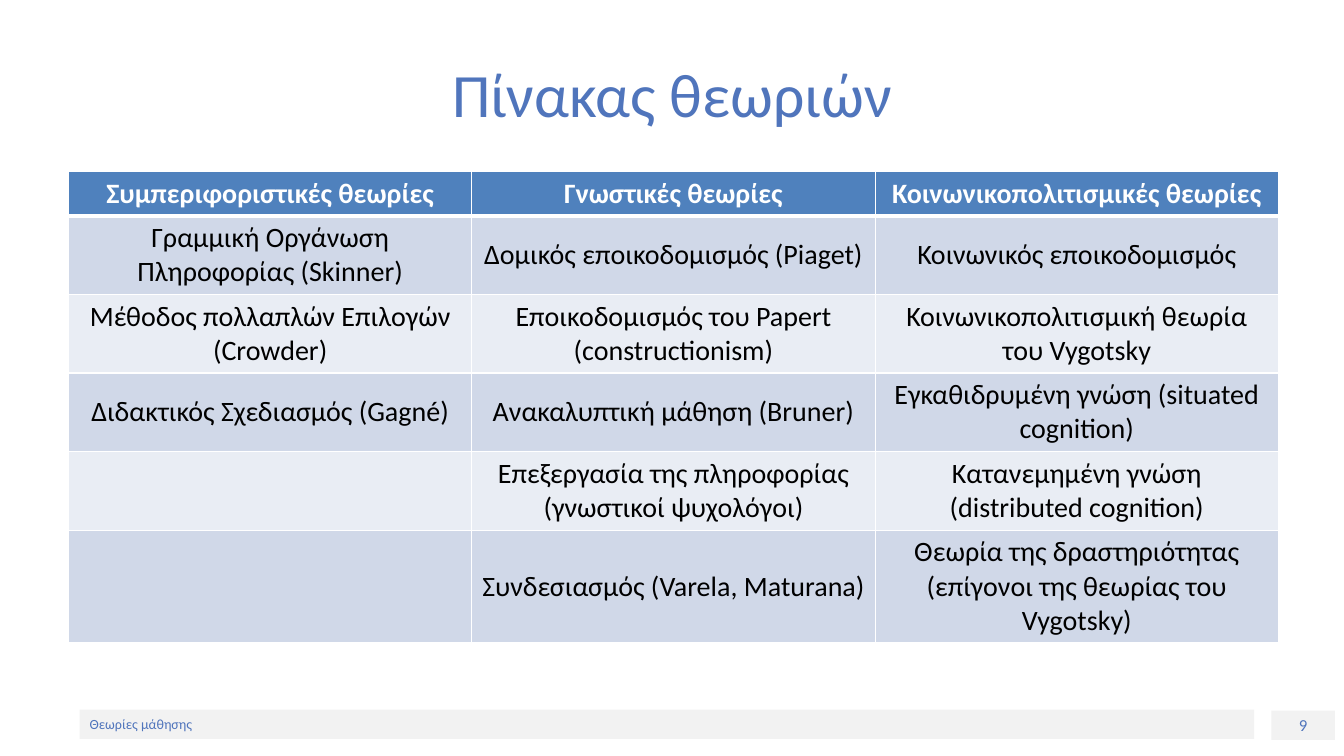
"""Build a slide with a table of learning theories in three families."""
from pptx import Presentation
from pptx import util as u
from pptx.dml.color import RGBColor
from pptx.enum import shapes, text
from pptx.oxml import parse_xml
from pptx.oxml.ns import nsdecls

TITLE = "Πίνακας θεωριών"
FOOTER = "Θεωρίες μάθησης"
PAGE_NUMBER = "9"
THEORIES = [
    ("Συμπεριφοριστικές θεωρίες", "Γνωστικές θεωρίες", "Κοινωνικοπολιτισμικές θεωρίες"),
    ("Γραμμική Οργάνωση Πληροφορίας (Skinner)", "Δομικός εποικοδομισμός (Piaget)",
     "Κοινωνικός εποικοδομισμός"),
    ("Μέθοδος πολλαπλών Επιλογών (Crowder)", "Εποικοδομισμός του Papert (constructionism)",
     "Κοινωνικοπολιτισμική θεωρία του Vygotsky"),
    ("Διδακτικός Σχεδιασμός (Gagné)", "Ανακαλυπτική μάθηση (Bruner)",
     "Εγκαθιδρυμένη γνώση (situated cognition)"),
    ("", "Επεξεργασία της πληροφορίας (γνωστικοί ψυχολόγοι)",
     "Κατανεμημένη γνώση (distributed cognition)"),
    ("", "Συνδεσιασμός (Varela, Maturana)",
     "Θεωρία της δραστηριότητας (επίγονοι της θεωρίας του Vygotsky)"),
]
ROW_HEIGHTS = [0.44, 0.78, 0.78, 0.78, 0.78, 1.12]
COLUMN_WIDTH = 4
THEME = {
    "font": "Calibri", "accent": "5075BC", "bar": "F2F2F2", "header": "4F81BD",
    "bands": ("D0D8E8", "E9EDF4"), "white": "FFFFFF", "black": "000000",
    "title_size": 44, "table_size": 20, "number_size": 12, "footer_size": 10,
    "thin": 1, "thick": 3,
}


def write(frame, words, size, color, align=text.PP_ALIGN.CENTER, bold=False):
    frame.text = words
    frame.word_wrap = True
    para = frame.paragraphs[0]
    para.alignment = align
    para.font.size = u.Pt(size)
    for span in para.runs:
        span.font.name = THEME["font"]
        span.font.size = u.Pt(size)
        span.font.bold = bold
        span.font.color.rgb = RGBColor.from_string(color)


def paint(item, color):
    item.fill.solid()
    item.fill.fore_color.rgb = RGBColor.from_string(color)


def add_bar(page, place, words, size, align):
    bar = page.shapes.add_shape(shapes.MSO_SHAPE.RECTANGLE, *map(u.Inches, place))
    bar.shadow.inherit = False
    paint(bar, THEME["bar"])
    bar.line.fill.background()
    bar.text_frame.vertical_anchor = text.MSO_ANCHOR.MIDDLE
    write(bar.text_frame, words, size, THEME["accent"], align)


def set_borders(cell, top, bottom):
    widths = {"L": THEME["thin"], "R": THEME["thin"], "T": top, "B": bottom}
    properties = cell._tc.get_or_add_tcPr()
    for index, (side, width) in enumerate(widths.items()):
        properties.insert(index, parse_xml(
            f'<a:ln{side} {nsdecls("a")} w="{u.Pt(width)}"><a:solidFill>'
            f'<a:srgbClr val="{THEME["white"]}"/></a:solidFill></a:ln{side}>'))


def add_theories(page):
    columns = len(THEORIES[0])
    frame = page.shapes.add_table(
        len(THEORIES), columns, u.Inches(0.68), u.Inches(1.7),
        u.Inches(COLUMN_WIDTH * columns), u.Inches(sum(ROW_HEIGHTS)))
    table = frame.table
    for column in table.columns:
        column.width = u.Inches(COLUMN_WIDTH)
    for row, (names, height) in enumerate(zip(THEORIES, ROW_HEIGHTS)):
        table.rows[row].height = u.Inches(height)
        header = row == 0
        fill = THEME["header"] if header else THEME["bands"][(row - 1) % 2]
        color = THEME["white"] if header else THEME["black"]
        top = THEME["thick"] if row == 1 else THEME["thin"]
        bottom = THEME["thick"] if header else THEME["thin"]
        for column, name in enumerate(names):
            cell = table.cell(row, column)
            paint(cell, fill)
            set_borders(cell, top, bottom)
            cell.vertical_anchor = text.MSO_ANCHOR.MIDDLE
            write(cell.text_frame, name, THEME["table_size"], color, bold=header)


def main():
    deck = Presentation()
    deck.slide_width, deck.slide_height = u.Inches(13.33), u.Inches(7.5)
    page = deck.slides.add_slide(deck.slide_layouts[6])
    add_bar(page, (12.61, 7.05, 0.63, 0.29), PAGE_NUMBER, THEME["number_size"],
            text.PP_ALIGN.CENTER)
    add_bar(page, (0.79, 7.04, 11.65, 0.29), FOOTER, THEME["footer_size"],
            text.PP_ALIGN.LEFT)
    title = page.shapes.add_textbox(*map(u.Inches, (0.67, 0.3, 12, 1.25)))
    title.text_frame.vertical_anchor = text.MSO_ANCHOR.MIDDLE
    write(title.text_frame, TITLE, THEME["title_size"], THEME["accent"])
    add_theories(page)
    deck.save("out.pptx")


if __name__ == "__main__":
    main()
